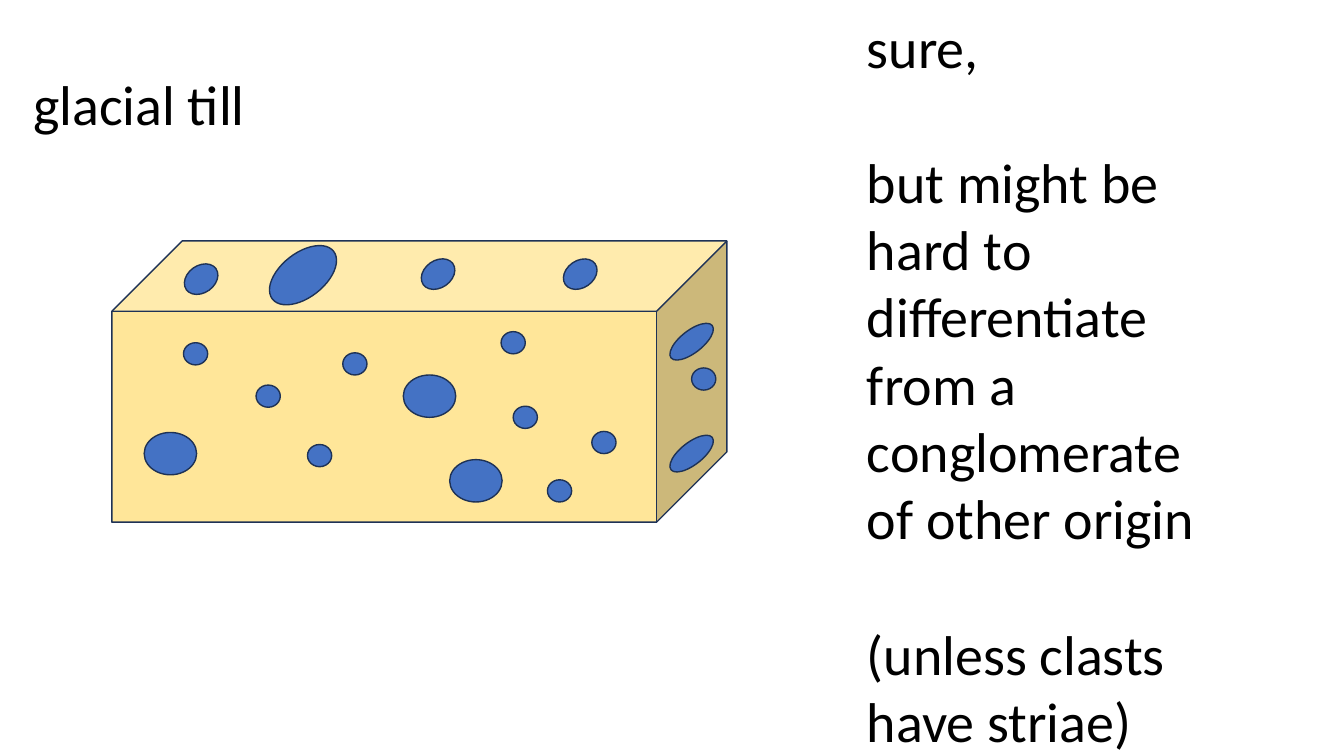
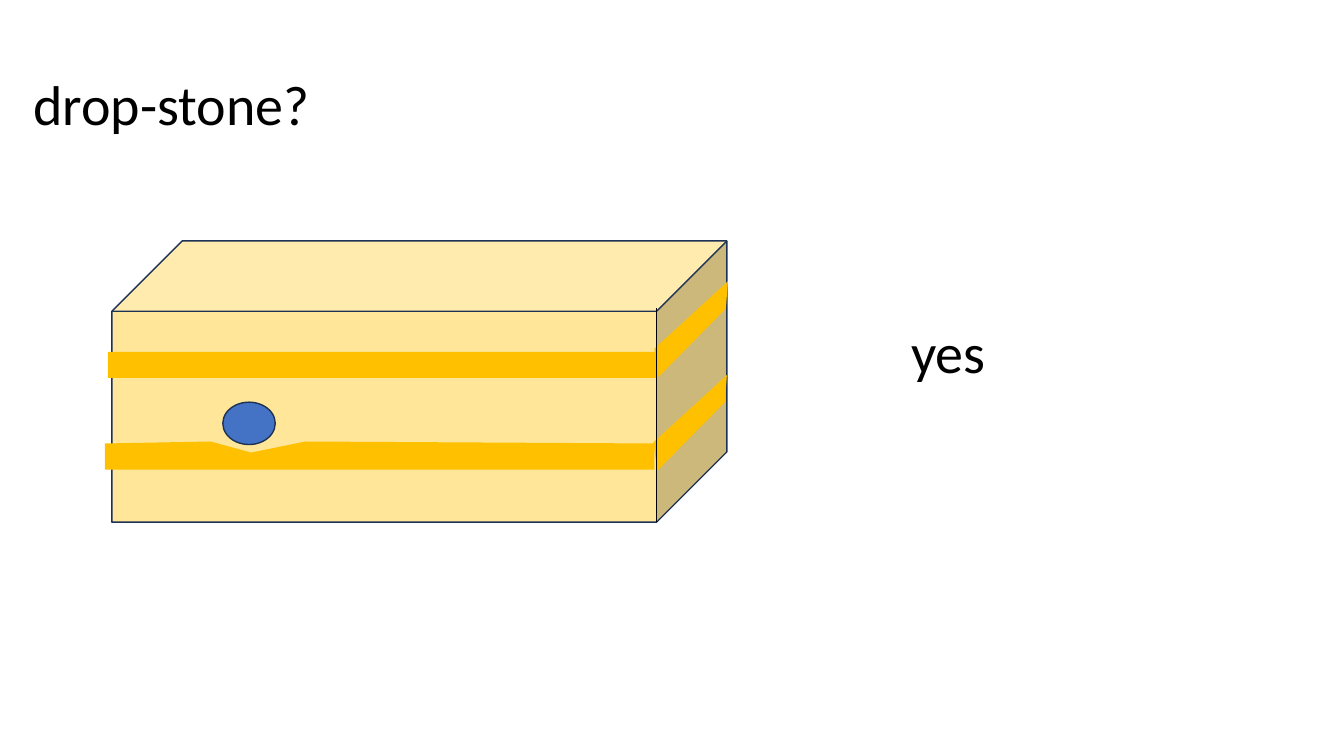
from lxml import etree
from pptx import Presentation
from pptx import util as u
from pptx.dml.color import RGBColor
from pptx.enum import shapes, text
from pptx.oxml.ns import qn

BLACK = RGBColor(0x00, 0x00, 0x00)
SAND = RGBColor(0xFF, 0xE6, 0x99)
GOLD = RGBColor(0xFF, 0xC0, 0x00)
CLAST_BLUE = RGBColor(0x44, 0x72, 0xC4)
OUTLINE = RGBColor(0x1E, 0x32, 0x56)
FONT, FONT_SIZE, LINE_HEIGHT = "Calibri", 40, 48.8

# Content: titles and answers
TILL_TITLE = "glacial till"
TILL_ANSWER = [
    "sure,",
    "but might be hard to differentiate from a conglomerate of other origin",
    "(unless clasts have striae)",
]
DROPSTONE_TITLE = "drop-stone?"
DROPSTONE_ANSWER = ["yes"]

# Boxes as left, top, width, height in inches
TITLE_BOX = (0.23, 0.64, 5.01, 0.77)
BLOCK_BOX = (1.11, 2.39, 6.1, 2.79)
TILL_ANSWER_BOX = (8.5, 0.07, 3.79, 7.51)
DROPSTONE_ANSWER_BOX = (8.94, 3.1, 3.79, 0.77)

# Clasts by size: (width, height), then left, top, rotation
PEBBLE, COBBLE = (0.24, 0.22), (0.52, 0.42)
TILL_CLASTS = {
    PEBBLE: [(1.82, 3.4, 0), (3.4, 3.5, 0), (3.05, 4.41, 0), (4.97, 3.29, 0),
             (5.87, 4.28, 0), (5.09, 4.03, 0), (5.43, 4.76, 0),
             (6.86, 3.65, 0), (2.54, 3.82, 0)],
    COBBLE: [(4, 3.72, 0), (1.43, 4.29, 0), (4.46, 4.56, 0)],
    (0.52, 0.22): [(6.6, 3.28, 321.9), (6.6, 4.39, 321.9)],
    (0.27, 0.36): [(1.86, 2.59, 54.6), (5.62, 2.54, 55.4), (4.21, 2.54, 54.6)],
    (0.77, 0.44): [(2.62, 2.51, 142)],
}
DROPSTONE_CLASTS = {COBBLE: [(2.21, 3.99, 0)]}

# Beds of the drop-stone block
UPPER_BED_BOX = (1.07, 3.49, 5.45, 0.26)
SAGGING_BED = [(1.04, 4.4), (2.09, 4.38), (2.49, 4.49), (3.03, 4.38),
               (6.49, 4.4), (6.49, 4.66), (1.04, 4.66)]
SIDE_BED = [(6.53, 3.74), (7.2, 3.06), (7.22, 2.79), (6.49, 3.46)]
SIDE_BED_SHIFTS = [(0, 0), (-0.01, 0.93)]
EDGE_X, EDGE_TOP, EDGE_BOTTOM = 6.51, 3.06, 5.18


def inches(values):
    return [u.Inches(value) for value in values]


def write_text(shape, paragraphs):
    frame = shape.text_frame
    frame.text = "\n".join(paragraphs)
    frame.word_wrap = True
    frame.auto_size = text.MSO_AUTO_SIZE.NONE
    frame.vertical_anchor = text.MSO_ANCHOR.TOP
    for index, paragraph in enumerate(frame.paragraphs):
        paragraph.alignment = text.PP_ALIGN.LEFT
        paragraph.space_before = u.Pt(LINE_HEIGHT if index else 0)
        font = paragraph.runs[0].font
        font.name, font.size = FONT, u.Pt(FONT_SIZE)
        font.color.rgb = BLACK


def paint(shape, fill, outline=None):
    shape.shadow.inherit = False
    shape.fill.solid()
    shape.fill.fore_color.rgb = fill
    if outline is None:
        shape.line.fill.background()
    else:
        shape.line.color.rgb = outline
        shape.line.width = u.Pt(1)


def add_preset(slide, kind, box, fill, outline=None, rotation=0):
    shape = slide.shapes.add_shape(kind, *inches(box))
    shape.rotation = rotation
    paint(shape, fill, outline)


def add_bed(slide, points, shift=(0, 0)):
    corners = [inches((x + shift[0], y + shift[1])) for x, y in points]
    builder = slide.shapes.build_freeform(*corners[0])
    builder.add_line_segments(corners[1:], close=True)
    paint(builder.convert_to_shape(), GOLD)


def add_clasts(slide, clasts):
    for size, places in clasts.items():
        for left, top, rotation in places:
            add_preset(slide, shapes.MSO_SHAPE.OVAL, (left, top, *size),
                       CLAST_BLUE, OUTLINE, rotation)


def add_block_slide(presentation, title, answer, answer_box, clasts):
    slide = presentation.slides.add_slide(presentation.slide_layouts[5])
    heading = slide.shapes.title
    heading.left, heading.top, heading.width, heading.height = inches(TITLE_BOX)
    write_text(heading, [title])
    write_text(slide.shapes.add_textbox(*inches(answer_box)), answer)
    add_preset(slide, shapes.MSO_SHAPE.CUBE, BLOCK_BOX, SAND, OUTLINE)
    add_clasts(slide, clasts)
    return slide


def add_beds(slide):
    add_preset(slide, shapes.MSO_SHAPE.RECTANGLE, UPPER_BED_BOX, GOLD)
    add_bed(slide, SAGGING_BED)
    for shift in SIDE_BED_SHIFTS:
        add_bed(slide, SIDE_BED, shift)
    edge = slide.shapes.add_connector(
        shapes.MSO_CONNECTOR.STRAIGHT,
        *inches((EDGE_X, EDGE_TOP, EDGE_X, EDGE_BOTTOM)))
    edge.line.color.rgb = BLACK
    edge.line.width = u.Pt(0.5)
    etree.SubElement(edge._element.spPr, qn("a:effectLst"))


def main():
    presentation = Presentation()
    presentation.slide_width, presentation.slide_height = inches((13.33, 7.5))
    add_block_slide(presentation, TILL_TITLE, TILL_ANSWER,
                    TILL_ANSWER_BOX, TILL_CLASTS)
    dropstone = add_block_slide(presentation, DROPSTONE_TITLE, DROPSTONE_ANSWER,
                                DROPSTONE_ANSWER_BOX, DROPSTONE_CLASTS)
    add_beds(dropstone)
    presentation.save("out.pptx")


if __name__ == "__main__":
    main()
